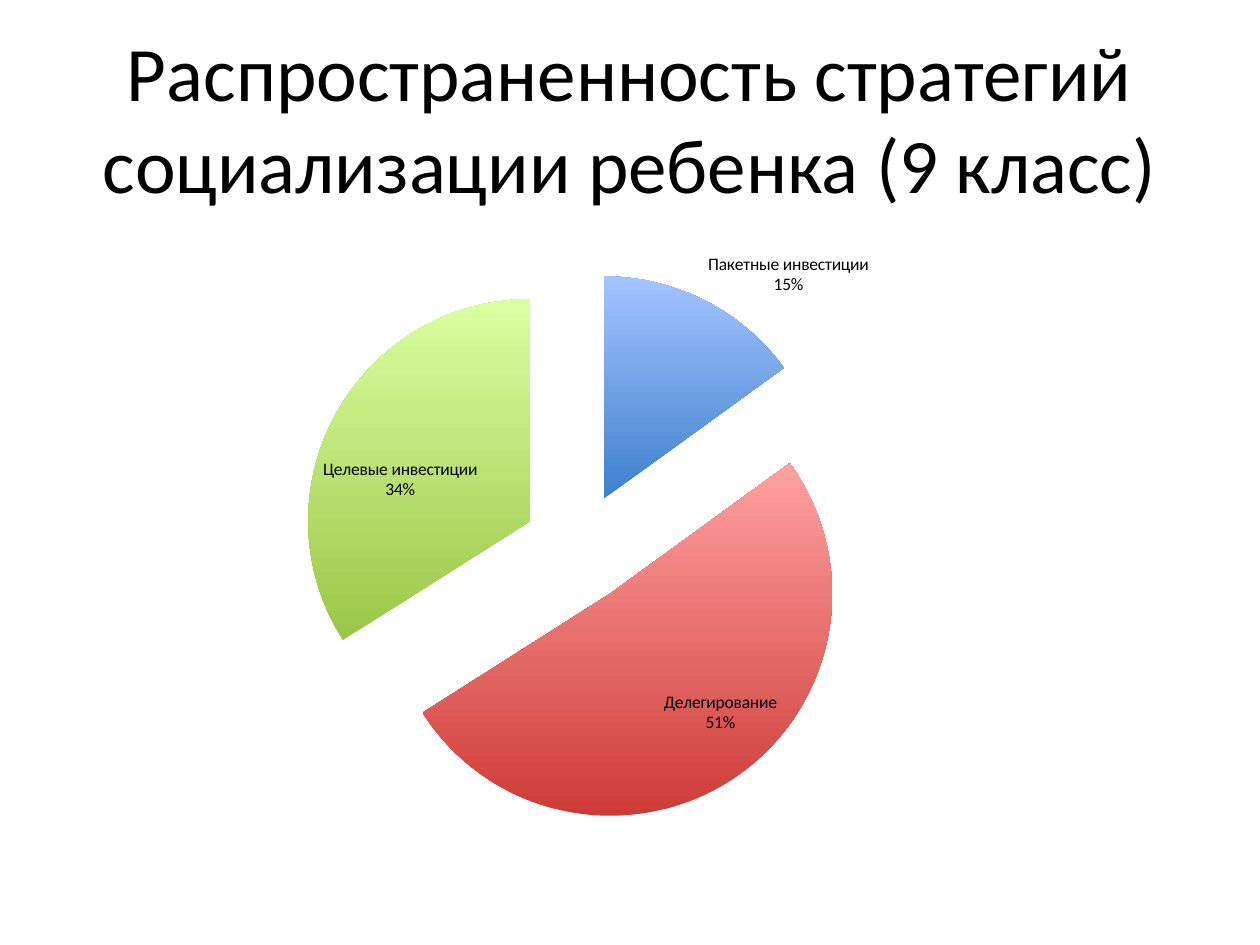
from dataclasses import dataclass

from lxml.etree import SubElement
from pptx import Presentation
from pptx.chart.chart import Chart
from pptx.chart.data import CategoryChartData
from pptx.dml.color import RGBColor
from pptx.enum.chart import XL_CHART_TYPE, XL_LABEL_POSITION
from pptx.enum.text import MSO_ANCHOR, PP_ALIGN
from pptx.oxml.ns import qn
from pptx.util import Pt

COLORS = {
    "text": "000000",
    "blue_top": "A3C4FF", "blue_bottom": "3F80CD",
    "red_top": "FFA2A1", "red_bottom": "CE3B37",
    "green_top": "DAFFA1", "green_bottom": "9BC747",
}
FONT = "Calibri"
EXPLOSION = 25
PLOT = {"x": 0.21, "y": 0.08, "w": 0.49, "h": 0.89}


@dataclass
class Strategy:
    name: str
    percent: int
    hue: str


STRATEGIES = [
    Strategy("Пакетные инвестиции", 15, "blue"),
    Strategy("Делегирование", 51, "red"),
    Strategy("Целевые инвестиции", 34, "green"),
]


def rgb(name: str) -> RGBColor:
    return RGBColor.from_string(COLORS[name])


def set_font(font, size: float) -> None:
    for key, value in {"name": FONT, "size": Pt(size), "bold": False}.items():
        setattr(font, key, value)
    font.color.rgb = rgb("text")


def add_title(s, text: str) -> None:
    sp = s.shapes.title
    box = {"left": 36, "top": 21.6, "width": 648, "height": 90}
    for key, value in box.items():
        setattr(sp, key, Pt(value))
    tf = sp.text_frame
    tf.word_wrap = True
    tf.vertical_anchor = MSO_ANCHOR.MIDDLE
    p = tf.paragraphs[0]
    p.alignment = PP_ALIGN.CENTER
    r = p.add_run()
    r.text = text
    set_font(r.font, 44)


def place_plot(chart: Chart) -> None:
    area = chart.plots[0]._element.getparent()
    for old in area.findall(qn("c:layout")):
        area.remove(old)
    layout = SubElement(area, qn("c:layout"))
    area.insert(0, layout)
    manual = SubElement(layout, qn("c:manualLayout"))
    values = {"layoutTarget": "inner", "xMode": "edge", "yMode": "edge", **PLOT}
    for tag, value in values.items():
        SubElement(manual, qn(f"c:{tag}")).set("val", str(value))


def paint_slice(point, hue: str) -> None:
    fill = point.format.fill
    fill.gradient()
    fill.gradient_angle = 90
    for stop, end in zip(fill.gradient_stops, ("bottom", "top")):
        stop.color.rgb = rgb(f"{hue}_{end}")
    point.format.line.fill.background()


def add_pie(s, strategies: list[Strategy]) -> None:
    data = CategoryChartData()
    data.categories = [item.name for item in strategies]
    data.add_series("Series 1", [item.percent for item in strategies])
    chart = s.shapes.add_chart(
        XL_CHART_TYPE.PIE, Pt(36), Pt(126), Pt(648), Pt(356.4), data
    ).chart
    chart.has_title = False
    chart.has_legend = False
    set_font(chart.font, 10)
    place_plot(chart)

    plot = chart.plots[0]
    plot.vary_by_categories = True
    series = plot.series[0]
    for i, item in enumerate(strategies):
        paint_slice(series.points[i], item.hue)
    explosion = SubElement(series._element, qn("c:explosion"))
    explosion.set("val", str(EXPLOSION))
    series._element.find(qn("c:dPt")).addprevious(explosion)

    labels = series.data_labels
    options = {
        "show_category_name": True,
        "show_percentage": True,
        "show_value": False,
        "position": XL_LABEL_POSITION.BEST_FIT,
    }
    for key, value in options.items():
        setattr(labels, key, value)
    set_font(labels.font, 10)
    separator = SubElement(labels._element, qn("c:separator"))
    separator.text = "\n"
    labels._element.find(qn("c:showBubbleSize")).addnext(separator)


def main() -> None:
    prs = Presentation()
    prs.slide_width, prs.slide_height = Pt(720), Pt(540)
    s = prs.slides.add_slide(prs.slide_layouts[5])
    add_title(s, "Распространенность стратегий социализации ребенка (9 класс)")
    add_pie(s, STRATEGIES)
    prs.save("out.pptx")


if __name__ == "__main__":
    main()
